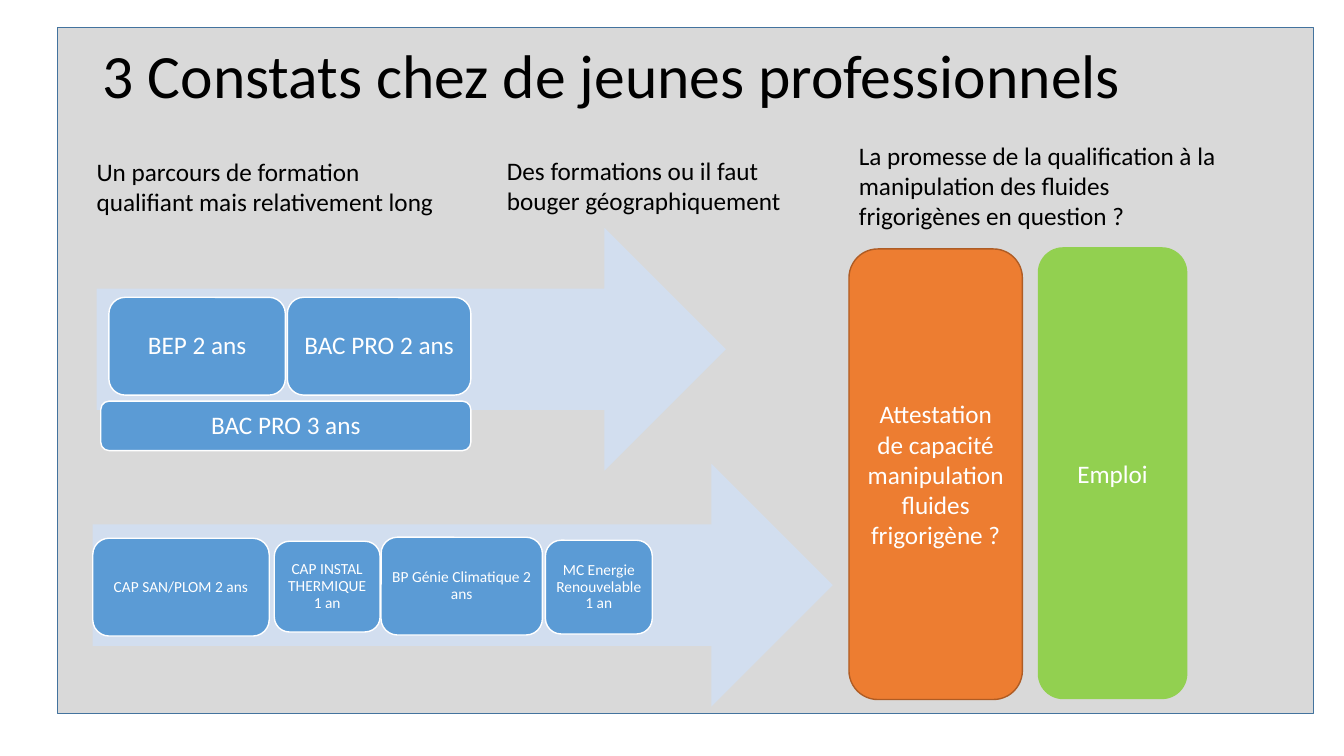
import pptx
import pptx.dml.color
import pptx.enum.shapes
import pptx.enum.text
import pptx.util
from dataclasses import dataclass

Inches = pptx.util.Inches
Pt = pptx.util.Pt
SHAPE = pptx.enum.shapes.MSO_SHAPE
ANCHOR = pptx.enum.text.MSO_ANCHOR
ALIGN = pptx.enum.text.PP_ALIGN


@dataclass(frozen=True)
class Theme:
    font: str = "Calibri"
    title: int = 44
    body: int = 18
    small: int = 11
    ink: str = "000000"
    white: str = "FFFFFF"
    panel: str = "D9D9D9"
    panel_line: str = "43739E"
    arrow: str = "D2DEEF"
    step: str = "5B9BD5"
    orange: str = "ED7D31"
    orange_line: str = "AF5C24"
    green: str = "92D050"


class Deck:
    """Holds the theme and the current slide."""

    def __init__(self, theme):
        self.theme = theme
        self.prs = pptx.Presentation()
        self.prs.slide_width = Inches(13.33)
        self.prs.slide_height = Inches(7.5)
        self.slide = self.prs.slides.add_slide(self.prs.slide_layouts[6])

    def color(self, value):
        return pptx.dml.color.RGBColor.from_string(value)

    def set_text(self, tf, text, size, color, align=ALIGN.LEFT, spacing=1.0):
        tf.word_wrap = True
        p = tf.paragraphs[0]
        p.text = text
        p.alignment = align
        p.line_spacing = spacing
        p.font.name = self.theme.font
        p.font.size = Pt(size)
        p.font.color.rgb = self.color(color)

    def text(self, box, text, size, spacing=1.0):
        sp = self.slide.shapes.add_textbox(*map(Inches, box))
        self.set_text(sp.text_frame, text, size, self.theme.ink, spacing=spacing)

    def shape(self, kind, box, fill, line=None):
        sp = self.slide.shapes.add_shape(kind, *map(Inches, box))
        sp.shadow.inherit = False
        sp.fill.solid()
        sp.fill.fore_color.rgb = self.color(fill)
        if line:
            sp.line.color.rgb = self.color(line)
            sp.line.width = Pt(1)
        else:
            sp.line.fill.background()
        return sp

    def card(self, box, text, fill, line):
        sp = self.shape(SHAPE.ROUNDED_RECTANGLE, box, fill, line)
        sp.text_frame.vertical_anchor = ANCHOR.MIDDLE
        self.set_text(sp.text_frame, text, self.theme.body, self.theme.white, ALIGN.CENTER)

    def step(self, box, text, size, inset):
        sp = self.shape(SHAPE.ROUNDED_RECTANGLE, box, self.theme.step, self.theme.white)
        tf = sp.text_frame
        tf.vertical_anchor = ANCHOR.MIDDLE
        tf.margin_left = tf.margin_right = Inches(inset)
        tf.margin_top = tf.margin_bottom = Inches(inset)
        self.set_text(tf, text, size, self.theme.white, ALIGN.CENTER, 0.9)

    def pathway(self, box, steps, size, inset):
        self.shape(SHAPE.RIGHT_ARROW, box, self.theme.arrow)
        for step_box, text in steps:
            self.step(step_box, text, size, inset)


def main():
    theme = Theme()
    deck = Deck(theme)

    # Background panel and title
    deck.shape(SHAPE.RECTANGLE, (0.57, 0.27, 12.46, 6.81), theme.panel, theme.panel_line)
    deck.text((0.92, 0.4, 11.5, 1.45), "3 Constats chez de jeunes professionnels",
              theme.title, 0.9)

    # The three findings
    findings = [
        ((0.86, 1.5, 3.63, 0.71),
         "Un parcours de formation qualifiant mais relativement long"),
        ((4.93, 1.49, 3.14, 0.71),
         "Des formations ou il faut bouger géographiquement"),
        ((8.42, 1.34, 3.92, 1.01),
         "La promesse de la qualification à la manipulation des fluides "
         "frigorigènes en question ?"),
    ]
    for box, text in findings:
        deck.text(box, text, theme.body)

    # Vocational diploma pathway
    deck.pathway((0.96, 2.26, 6.24, 2.41), [
        ((1.08, 2.95, 1.75, 0.97), "BEP 2 ans"),
        ((2.85, 2.95, 1.82, 0.97), "BAC PRO 2 ans"),
        ((1.0, 3.98, 3.67, 0.49), "BAC PRO 3 ans"),
    ], theme.body, 0.07)

    # Apprenticeship pathway
    deck.pathway((0.92, 4.6, 7.34, 2.41), [
        ((0.92, 5.34, 1.75, 0.97), "CAP SAN/PLOM 2 ans"),
        ((2.72, 5.37, 1.05, 0.9), "CAP INSTAL THERMIQUE 1 an"),
        ((3.78, 5.33, 1.6, 0.97), "BP Génie Climatique 2 ans"),
        ((5.41, 5.36, 1.06, 0.93), "MC Energie Renouvelable 1 an"),
    ], theme.small, 0.05)

    # Certificate and job
    deck.card((8.42, 2.47, 1.72, 4.47),
              "Attestation de capacité manipulation fluides frigorigène ?",
              theme.orange, theme.orange_line)
    deck.card((10.3, 2.46, 1.47, 4.47), "Emploi", theme.green, theme.green)

    deck.prs.save("out.pptx")


if __name__ == "__main__":
    main()
